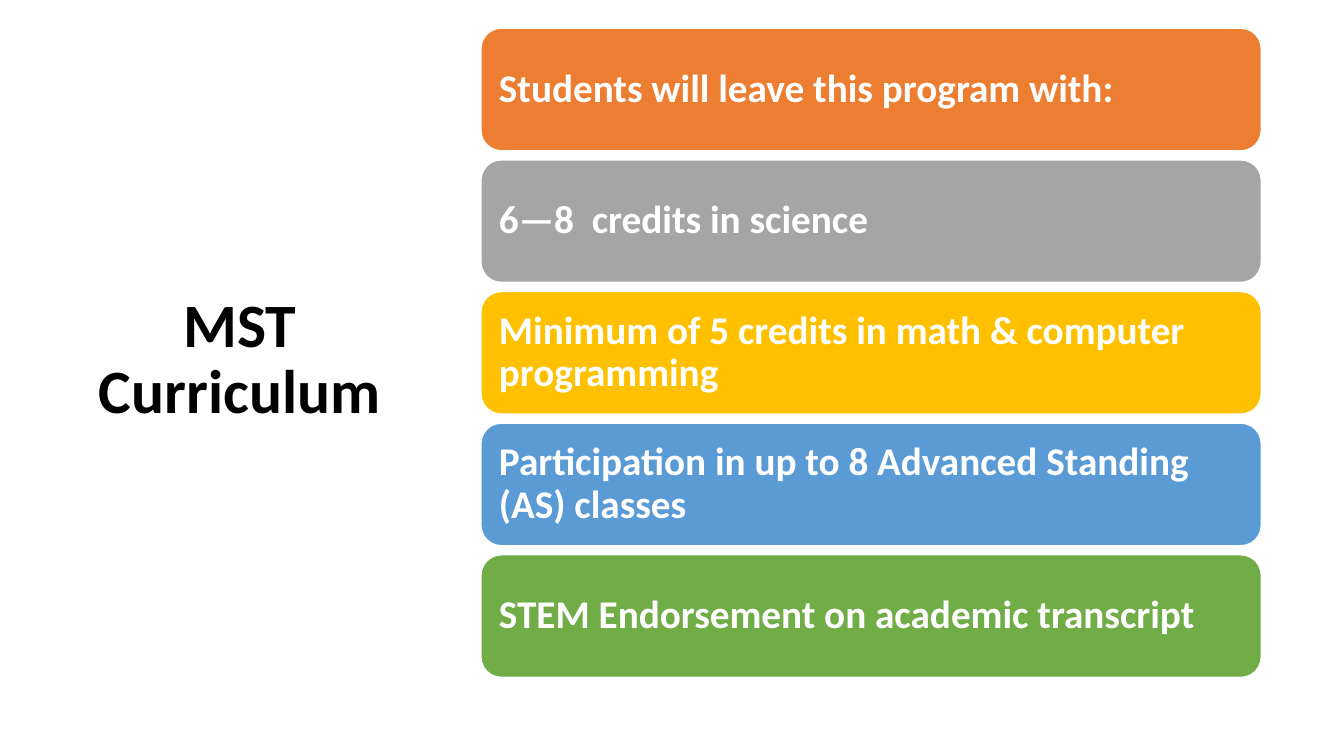
from pptx import Presentation
from pptx.dml.color import RGBColor
from pptx.enum.shapes import MSO_SHAPE as Shape
from pptx.enum.text import MSO_ANCHOR as Anchor, MSO_AUTO_SIZE as AutoSize, PP_ALIGN as Align
from pptx.util import Inches, Pt

FONT = "Calibri"
COLORS = {
    "black": "000000", "white": "FFFFFF", "orange": "ED7D31", "gray": "A5A5A5",
    "gold": "FFC000", "blue": "5B9BD5", "green": "70AD47",
}
OUTCOMES = [
    ("Students will leave this program with:", "orange"),
    ("6—8  credits in science", "gray"),
    ("Minimum of 5 credits in math & computer programming", "gold"),
    ("Participation in up to 8 Advanced Standing (AS) classes", "blue"),
    ("STEM Endorsement on academic transcript", "green"),
]
# Regions: left, top, width, height in inches
TITLE_BOX = (0.65, 0.7, 3.46, 5.75)
OUTCOMES_BOX = (4.77, 0.28, 7.74, 6.44)
BAR_GAP = 0.09


def color(name):
    return RGBColor.from_string(COLORS[name])


def write(frame, text, size, ink, align):
    frame.word_wrap = True
    frame.auto_size = AutoSize.NONE
    frame.vertical_anchor = Anchor.MIDDLE
    paragraph = frame.paragraphs[0]
    paragraph.alignment = align
    paragraph.line_spacing = 0.9
    run = paragraph.add_run()
    run.text = text
    run.font.name = FONT
    run.font.size = Pt(size)
    run.font.bold = True
    run.font.color.rgb = color(ink)


def place_title(slide, box):
    title = slide.shapes.title
    title.left, title.top, title.width, title.height = map(Inches, box)
    write(title.text_frame, "MST Curriculum", 44, "black", Align.CENTER)


def stack_outcomes(slide, box):
    left, top, width, height = box
    bar_height = (height - BAR_GAP * (len(OUTCOMES) - 1)) / len(OUTCOMES)
    for row, (outcome, fill) in enumerate(OUTCOMES):
        bar_top = top + row * (bar_height + BAR_GAP)
        bar = slide.shapes.add_shape(
            Shape.ROUNDED_RECTANGLE,
            *map(Inches, (left, bar_top, width, bar_height)))
        bar.shadow.inherit = False
        bar.fill.solid()
        bar.fill.fore_color.rgb = color(fill)
        bar.line.color.rgb = color("white")
        bar.line.width = Pt(1)
        frame = bar.text_frame
        frame.margin_left = frame.margin_right = Inches(0.12)
        frame.margin_top = frame.margin_bottom = Inches(0.12)
        write(frame, outcome, 28, "white", Align.LEFT)


def main():
    deck = Presentation()
    deck.slide_width, deck.slide_height = Inches(13.33), Inches(7.5)
    slide = deck.slides.add_slide(deck.slide_layouts.get_by_name("Title Only"))
    place_title(slide, TITLE_BOX)
    stack_outcomes(slide, OUTCOMES_BOX)
    deck.save("out.pptx")


if __name__ == "__main__":
    main()
